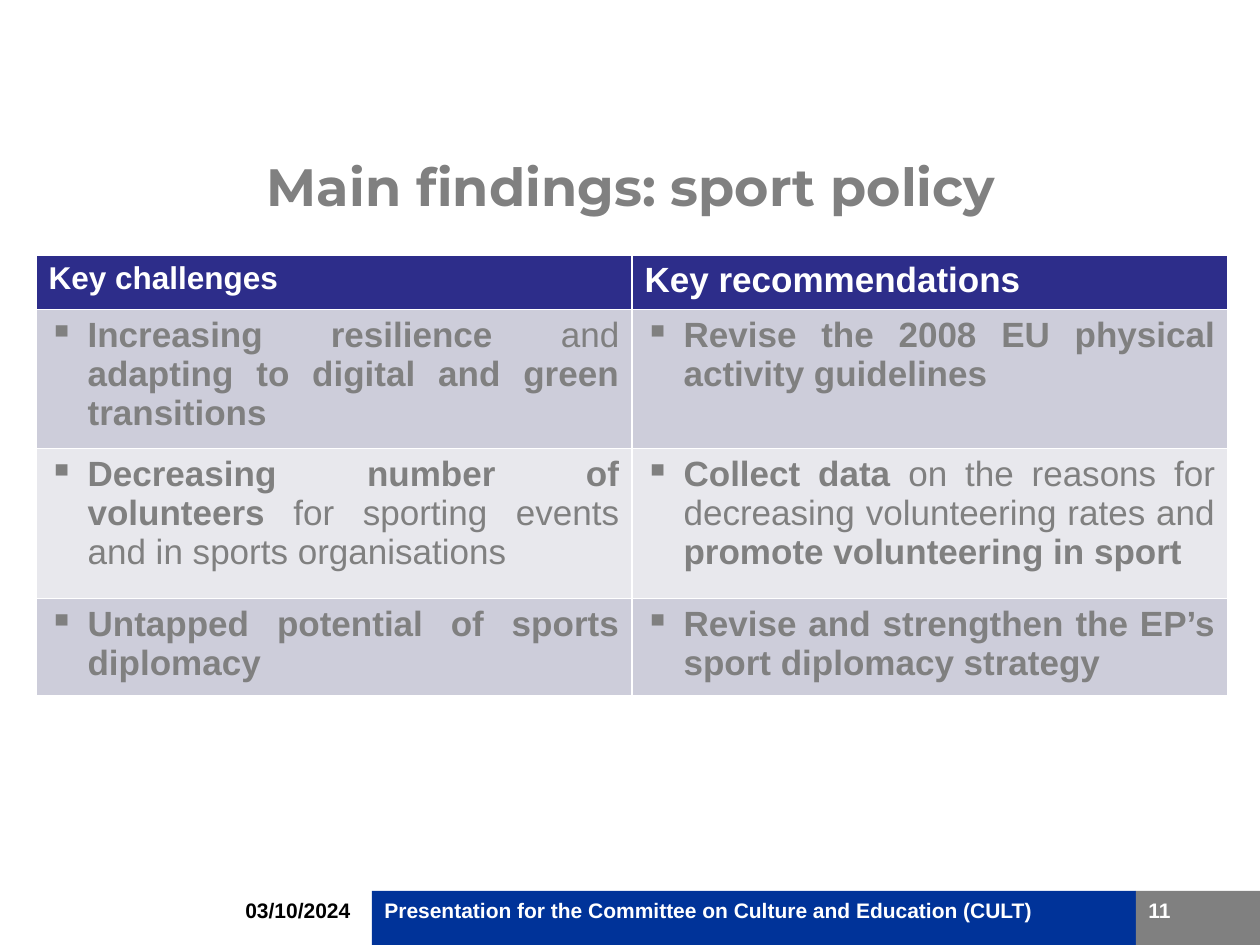
from pptx import Presentation
from pptx.dml.color import RGBColor
from pptx.enum.shapes import MSO_SHAPE as Shape
from pptx.enum.text import MSO_ANCHOR as Anchor, PP_ALIGN as Align
from pptx.oxml.xmlchemy import OxmlElement as Element
from pptx.util import Pt

PX = 914400 / 126


def px(*vals):
    return [round(v * PX) for v in vals]


def write(frame, text, size=12, color="FFFFFF", font="Arial",
          align=None, bullet=None):
    """Fill a text frame; parts between asterisks are bold."""
    frame.word_wrap = True
    frame.vertical_anchor = Anchor.TOP
    para = frame.paragraphs[0]
    para.alignment = align
    if bullet:
        props = para._p.get_or_add_pPr()
        indent, = px(39)
        props.set("marL", str(indent))
        props.set("indent", str(-indent))
        mark = Element("a:buChar")
        mark.set("char", bullet)
        props.append(mark)
    for i, part in enumerate(text.split("*")):
        if part:
            run = para.add_run()
            run.text = part
            run.font.name = font
            run.font.size = Pt(size)
            run.font.bold = i % 2 == 1
            run.font.color.rgb = RGBColor.from_string(color)


deck = Presentation()
deck.slide_width, deck.slide_height = px(1260, 945)
slide = deck.slides.add_slide(deck.slide_layouts[5])
shapes = slide.shapes

# Title
title = shapes.title
title.left, title.top, title.width, title.height = px(64, 145, 1134, 110)
title.text_frame.margin_top, = px(9)
write(title.text_frame, "*Main findings: sport policy*", size=30,
      color="808080", font="Montserrat", align=Align.CENTER)

# Footer: date, event and page number
date = shapes.add_textbox(*px(233, 891, 139, 54))
write(date.text_frame, "*03/10/2024*", color="000000")
event = "*Presentation for the Committee on Culture and Education (CULT)*"
for left, width, fill, text in [(372, 764, "003399", event),
                                (1136, 124, "808080", "*11*")]:
    bar = shapes.add_shape(Shape.RECTANGLE, *px(left, 891, width, 54))
    bar.shadow.inherit = False
    bar.fill.solid()
    bar.fill.fore_color.rgb = RGBColor.from_string(fill)
    bar.line.fill.background()
    write(bar.text_frame, text, align=Align.LEFT)

# Table of challenges and recommendations
heads = [("*Key challenges*", 18), ("*Key recommendations*", 20)]
pairs = [
    ("*Increasing resilience *and *adapting to digital and green transitions*",
     "*Revise the 2008 EU physical activity guidelines*"),
    ("*Decreasing number of volunteers *for sporting events and in sports "
     "organisations ",
     "*Collect data *on the reasons for decreasing volunteering rates and"
     "* promote volunteering in sport*"),
    ("*Untapped potential of sports diplomacy *",
     "*Revise and strengthen the EP’s sport diplomacy strategy*"),
]
highs = px(51, 129, 150, 97)
fills = ["2D2D8A", "CDCDDA", "E8E8ED", "CDCDDA"]

table = shapes.add_table(4, 2, *px(36, 255, 1192, 427)).table
for row, high, fill in zip(table.rows, highs, fills):
    row.height = high
    for cell in row.cells:
        cell.fill.solid()
        cell.fill.fore_color.rgb = RGBColor.from_string(fill)
for col, (text, size) in enumerate(heads):
    write(table.cell(0, col).text_frame, text, size=size)
for row, pair in enumerate(pairs, 1):
    for col, text in enumerate(pair):
        write(table.cell(row, col).text_frame, text, size=20, color="808080",
              align=Align.JUSTIFY, bullet="▪")

deck.save("out.pptx")
